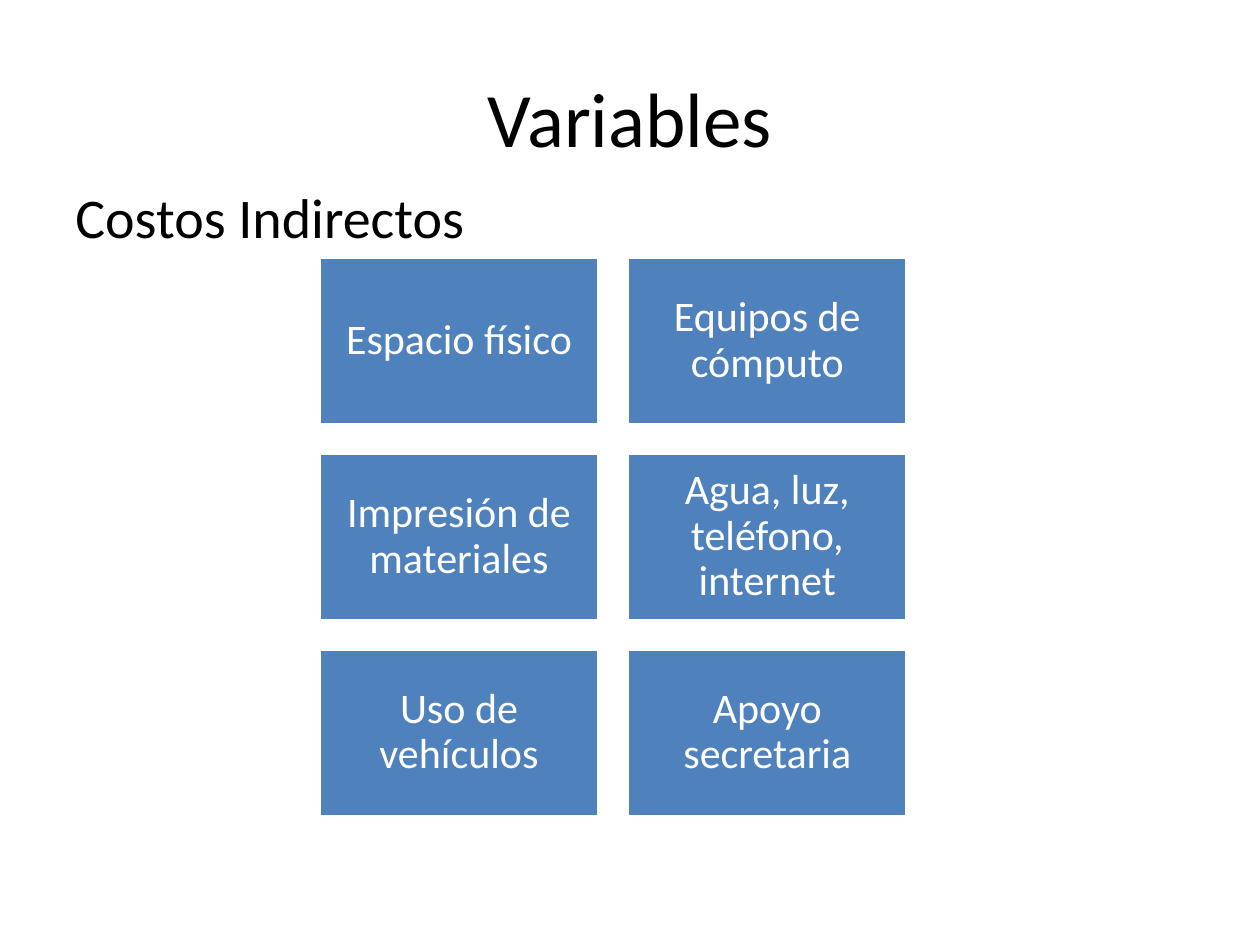
from pptx import Presentation
from pptx.dml.color import RGBColor
from pptx.enum.shapes import MSO_SHAPE
from pptx.enum.text import MSO_ANCHOR, PP_ALIGN
from pptx.util import Cm, Pt

COLORS = {"text": "000000", "tile": "4F81BD", "light": "FFFFFF"}
FONT = "Calibri"
COSTS = [
    "Espacio físico", "Equipos de cómputo",
    "Impresión de materiales", "Agua, luz, teléfono, internet",
    "Uso de vehículos", "Apoyo secretaria",
]


def rgb(name):
    """Return the palette colour with the given name."""
    return RGBColor.from_string(COLORS[name])


def write(sp, text, size, color, align, anchor):
    """Set and format the single paragraph of a shape."""
    tf = sp.text_frame
    tf.word_wrap = True
    tf.vertical_anchor = anchor
    tf.text = text
    p = tf.paragraphs[0]
    p.alignment = align
    font = p.runs[0].font
    font.name, font.size, font.color.rgb = FONT, Pt(size), rgb(color)
    return p


def add_title(s, x, y, w, h):
    """Place the centred slide title."""
    sp = s.shapes.add_textbox(Cm(x), Cm(y), Cm(w), Cm(h))
    write(sp, "Variables", 44, "text", PP_ALIGN.CENTER, MSO_ANCHOR.MIDDLE)


def add_subtitle(s, x, y, w, h):
    """Place the heading above the cost tiles."""
    sp = s.shapes.add_textbox(Cm(x), Cm(y), Cm(w), Cm(h))
    write(sp, "Costos Indirectos", 32, "text", PP_ALIGN.LEFT, MSO_ANCHOR.TOP)


def add_cost_grid(s, x, y, w, h, cols=2, gap=0.57):
    """Fill the box with equal tiles, one for each cost."""
    rows = len(COSTS) // cols
    tile_w = (w - gap * (cols - 1)) / cols
    tile_h = (h - gap * (rows - 1)) / rows
    for i, cost in enumerate(COSTS):
        row, col = divmod(i, cols)
        sp = s.shapes.add_shape(
            MSO_SHAPE.RECTANGLE,
            Cm(x + col * (tile_w + gap)), Cm(y + row * (tile_h + gap)),
            Cm(tile_w), Cm(tile_h))
        sp.shadow.inherit = False
        sp.fill.solid()
        sp.fill.fore_color.rgb = rgb("tile")
        sp.line.color.rgb = rgb("light")
        sp.line.width = Pt(2)
        tf = sp.text_frame
        tf.margin_left = tf.margin_right = Cm(0.25)
        tf.margin_top = tf.margin_bottom = Cm(0.25)
        p = write(sp, cost, 24, "light", PP_ALIGN.CENTER, MSO_ANCHOR.MIDDLE)
        p.line_spacing = 0.9


def main():
    """Build and save the slide."""
    prs = Presentation()
    prs.slide_width, prs.slide_height = Cm(25.4), Cm(19.05)
    s = prs.slides.add_slide(prs.slide_layouts[6])
    add_title(s, 1.27, 0.76, 22.86, 3.18)
    add_subtitle(s, 1.27, 3.56, 22.86, 12.57)
    add_cost_grid(s, 6.43, 5.18, 11.86, 11.28)
    prs.save("out.pptx")


if __name__ == "__main__":
    main()
